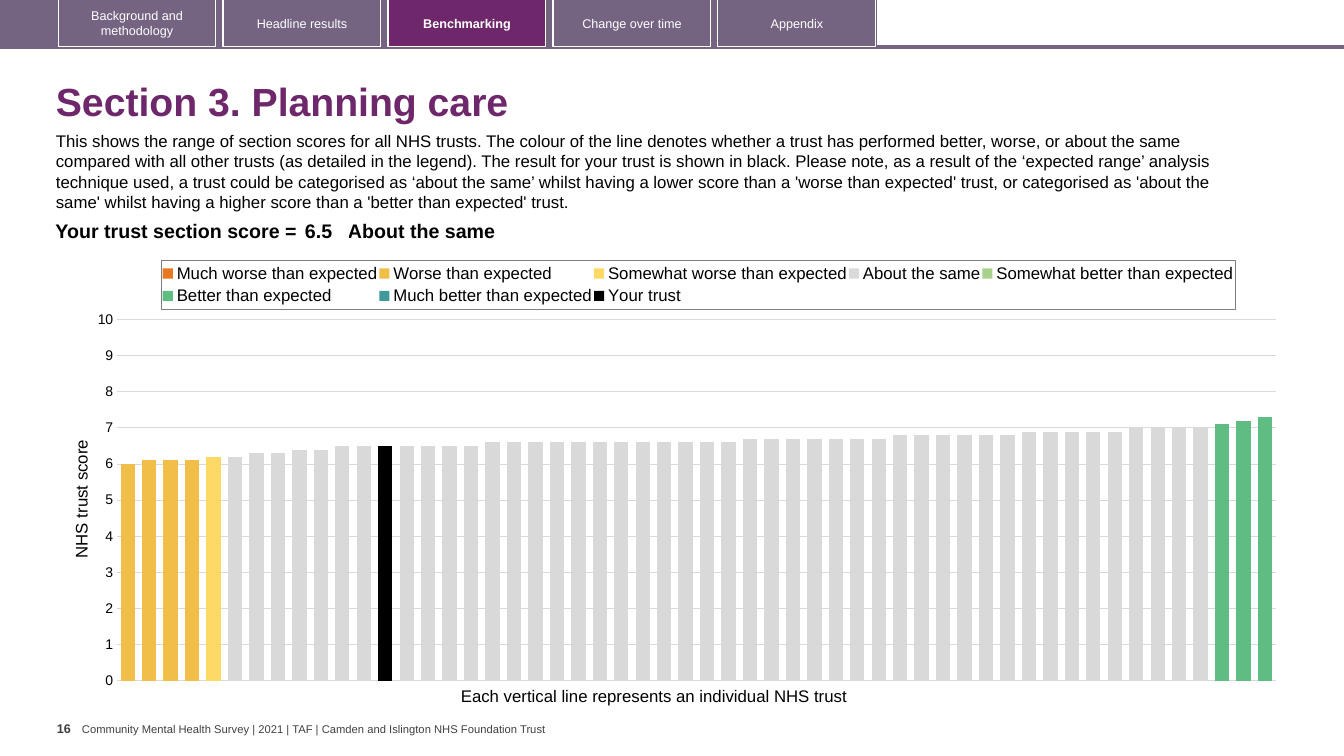
from copy import deepcopy

from lxml import etree
from pptx import Presentation, util as u
from pptx.chart.data import CategoryChartData
from pptx.dml.color import RGBColor
from pptx.enum import chart as ch, shapes, text
from pptx.oxml import parse_xml
from pptx.oxml.ns import nsdecls, qn

PX = 914400 / 100.8
PLUM, MAUVE, GREY = "6D276A", "756382", "404040"
BLACK, WHITE, PALE = "000000", "FFFFFF", "D9D9D9"

TABS = ["Background and methodology", "Headline results", "Benchmarking",
        "Change over time", "Appendix"]
INTRO = (
    "This shows the range of section scores for all NHS trusts. The colour of the line "
    "denotes whether a trust has performed better, worse, or about the same compared with "
    "all other trusts (as detailed in the legend). The result for your trust is shown in "
    "black. Please note, as a result of the ‘expected range’ analysis technique used, a "
    "trust could be categorised as ‘about the same’ whilst having a lower score than a "
    "'worse than expected' trust, or categorised as 'about the same' whilst having a higher "
    "score than a 'better than expected' trust.")

COUNT = 54
SAME = [(6.2, 1), (6.3, 2), (6.4, 2), (6.5, 7), (6.6, 12), (6.7, 7), (6.8, 6), (6.9, 5), (7, 4)]
# name, colour, index of first bar, scores
BANDS = [
    ("Much worse than expected", "E87722", 0, []),
    ("Worse than expected", "F1BE48", 0, [6, 6.1, 6.1, 6.1]),
    ("Somewhat worse than expected", "FFD966", 4, [6.2]),
    ("About the same", PALE, 5, [score for score, n in SAME for _ in range(n)]),
    ("Somewhat better than expected", "A9D18E", 0, []),
    ("Better than expected", "5FBD83", 51, [7.1, 7.2, 7.3]),
    ("Much better than expected", "419999", 0, []),
    ("Your trust", BLACK, 12, [6.5]),
]


def px(n):
    return u.Emu(round(n * PX))


def rgb(code):
    return RGBColor.from_string(code)


def style(font, size, color=BLACK, bold=False):
    font.name, font.size, font.bold = "Arial", u.Pt(size), bold
    font.color.rgb = rgb(color)


def write(frame, words, size=12, color=BLACK, bold=False, align=None, anchor="TOP",
          inset=None, wrap=True, lead=None):
    """Fill a text frame; inset is (left, top, right, bottom) in px."""
    frame.word_wrap = wrap
    frame.vertical_anchor = text.MSO_ANCHOR[anchor]
    if inset:
        (frame.margin_left, frame.margin_top,
         frame.margin_right, frame.margin_bottom) = map(px, inset)
    para = frame.paragraphs[0]
    para.alignment = align
    para.line_spacing = lead
    run = para.add_run()
    run.text = words
    style(run.font, size, color, bold)


def layout(node, after, x, y, w=None, h=None, inner=False):
    """Give a chart part a fixed place, as fractions of the chart."""
    for old in node.findall(qn("c:layout")):
        node.remove(old)
    box = etree.Element(qn("c:layout"))
    manual = etree.SubElement(box, qn("c:manualLayout"))
    parts = [("layoutTarget", "inner" if inner else None), ("xMode", "edge"),
             ("yMode", "edge"), ("x", x), ("y", y), ("w", w), ("h", h)]
    for tag, val in parts:
        if val is not None:
            etree.SubElement(manual, qn("c:" + tag)).set("val", str(val))
    if after:
        node.find(qn(after)).addnext(box)
    else:
        node.insert(0, box)


def split(area):
    """Move the last series to a second, unlabelled axis on the right."""
    first, cat, val = (area.find(qn("c:" + tag)) for tag in ("barChart", "catAx", "valAx"))
    second, right, base = map(deepcopy, (first, val, cat))
    first.remove(first.findall(qn("c:ser"))[-1])
    for series in second.findall(qn("c:ser"))[:-1]:
        second.remove(series)
    first.addnext(second)
    val.addnext(right)
    right.addnext(base)
    for tag in ("c:majorGridlines", "c:title"):
        right.remove(right.find(qn(tag)))
    for tag, value in [("axPos", "r"), ("tickLblPos", "none"), ("crosses", "max")]:
        right.find(qn("c:" + tag)).set("val", value)
    ids = {cat.find(qn("c:axId")).get("val"): "501", val.find(qn("c:axId")).get("val"): "502"}
    for node in (second, right, base):
        for link in node.findall(qn("c:axId")) + node.findall(qn("c:crossAx")):
            link.set("val", ids[link.get("val")])


class Page:
    def __init__(self, deck):
        self.slide = deck.slides.add_slide(deck.slide_layouts[6])
        self.items = self.slide.shapes

    def label(self, box, words, **form):
        write(self.items.add_textbox(*map(px, box)).text_frame, words, **form)

    def block(self, box, fill=None, line=None):
        item = self.items.add_shape(shapes.MSO_SHAPE.RECTANGLE, *map(px, box))
        item.shadow.inherit = False
        if fill:
            item.fill.solid()
            item.fill.fore_color.rgb = rgb(fill)
        else:
            item.fill.background()
        if line:
            item.line.color.rgb = rgb(line)
            item.line.width = u.Pt(0.75)
        else:
            item.line.fill.background()
        return item

    def tab(self, box, words, on):
        item = self.block(box, PLUM if on else None, WHITE)
        write(item.text_frame, words, size=9, color=WHITE, bold=on,
              align=text.PP_ALIGN.CENTER, anchor="MIDDLE")

    def score(self, box, cols):
        """Lay out one table row; cols holds (width, words, align, side inset)."""
        table = self.items.add_table(1, len(cols), *map(px, box)).table
        table.first_row = table.horz_banding = False
        for i, (width, words, align, side) in enumerate(cols):
            table.columns[i].width = px(width)
            cell = table.cell(0, i)
            cell.fill.background()
            cell.margin_left = cell.margin_right = px(side)
            cell.margin_top = cell.margin_bottom = px(4)
            para = cell.text_frame.paragraphs[0]
            para.alignment = align
            run = para.add_run()
            run.text = words
            style(run.font, 14, bold=True)

    def bars(self, box):
        data = CategoryChartData()
        data.categories = [str(i + 1) for i in range(COUNT)]
        for name, _, start, vals in BANDS:
            rest = COUNT - start - len(vals)
            data.add_series(name, [None] * start + vals + [None] * rest)
        chart = self.items.add_chart(
            ch.XL_CHART_TYPE.COLUMN_CLUSTERED, *map(px, box), data).chart
        chart.has_title = False
        style(chart.font, 10)
        plot = chart.plots[0]
        plot.gap_width, plot.overlap, plot.vary_by_categories = 50, 100, False
        for series, band in zip(plot.series, BANDS):
            series.format.fill.solid()
            series.format.fill.fore_color.rgb = rgb(band[1])
        area = chart._chartSpace.chart.plotArea
        layout(area, None, 0.04, 0.158, 0.946, 0.808, inner=True)
        chart.category_axis.visible = False
        self.scale(chart.value_axis)
        self.legend(chart)
        split(area)

    def scale(self, axis):
        axis.minimum_scale, axis.maximum_scale, axis.major_unit = 0, 10, 1
        axis.major_tick_mark = ch.XL_TICK_MARK.NONE
        axis.format.line.fill.background()
        style(axis.tick_labels.font, 10)
        axis.tick_labels.number_format = "0"
        axis.tick_labels.number_format_is_linked = False
        grid = axis.major_gridlines.format.line
        grid.color.rgb, grid.width = rgb(PALE), u.Pt(0.75)
        title = axis.axis_title
        run = title.text_frame.paragraphs[0].add_run()
        run.text = "NHS trust score"
        style(run.font, 12)
        layout(title._element, "c:tx", 0, 0.42)

    def legend(self, chart):
        chart.has_legend = True
        key = chart.legend
        key.position = ch.XL_LEGEND_POSITION.TOP
        key.include_in_layout = False
        style(key.font, 12)
        layout(key._element, "c:legendPos", 0.076, 0.025, 0.877, 0.11)
        key._element.find(qn("c:overlay")).addnext(parse_xml(
            f'<c:spPr {nsdecls("c", "a")}><a:ln w="9525"><a:solidFill>'
            '<a:srgbClr val="7F7F7F"/></a:solidFill></a:ln></c:spPr>'))


def main():
    deck = Presentation()
    deck.slide_width, deck.slide_height = px(1344), px(756)
    page = Page(deck)
    page.label((82, 722, 471, 14), "Community Mental Health Survey | 2021 | TAF | "
               "Camden and Islington NHS Foundation Trust",
               size=8, color=GREY, anchor="MIDDLE", inset=(0, 0, 0, 0), wrap=False)
    page.block((0, 45, 1344, 4), MAUVE)
    page.block((0, 0, 877, 47), MAUVE)
    for i, words in enumerate(TABS):
        page.tab((58 + 165 * i, -1, 158, 48), words, words == "Benchmarking")
    page.label((46, 67, 1259, 73), "Section 3. Planning care", size=28, color=PLUM,
               bold=True, anchor="MIDDLE", lead=0.9)
    page.label((57, 716, 25, 40), "16", size=9, color=GREY, bold=True,
               inset=(0, 5, 0, 5), wrap=False)
    page.label((46, 126, 1223, 92), INTRO)
    page.label((451, 681, 414, 30), "Each vertical line represents an individual NHS trust",
               wrap=False)
    page.bars((68, 249, 1225, 447))
    page.score((36, 217, 1178, 31), [
        (265, "Your trust section score =", text.PP_ALIGN.RIGHT, 4),
        (47, "6.5", None, 4), (866, "About the same", None, 0)])
    deck.save("out.pptx")


if __name__ == "__main__":
    main()
